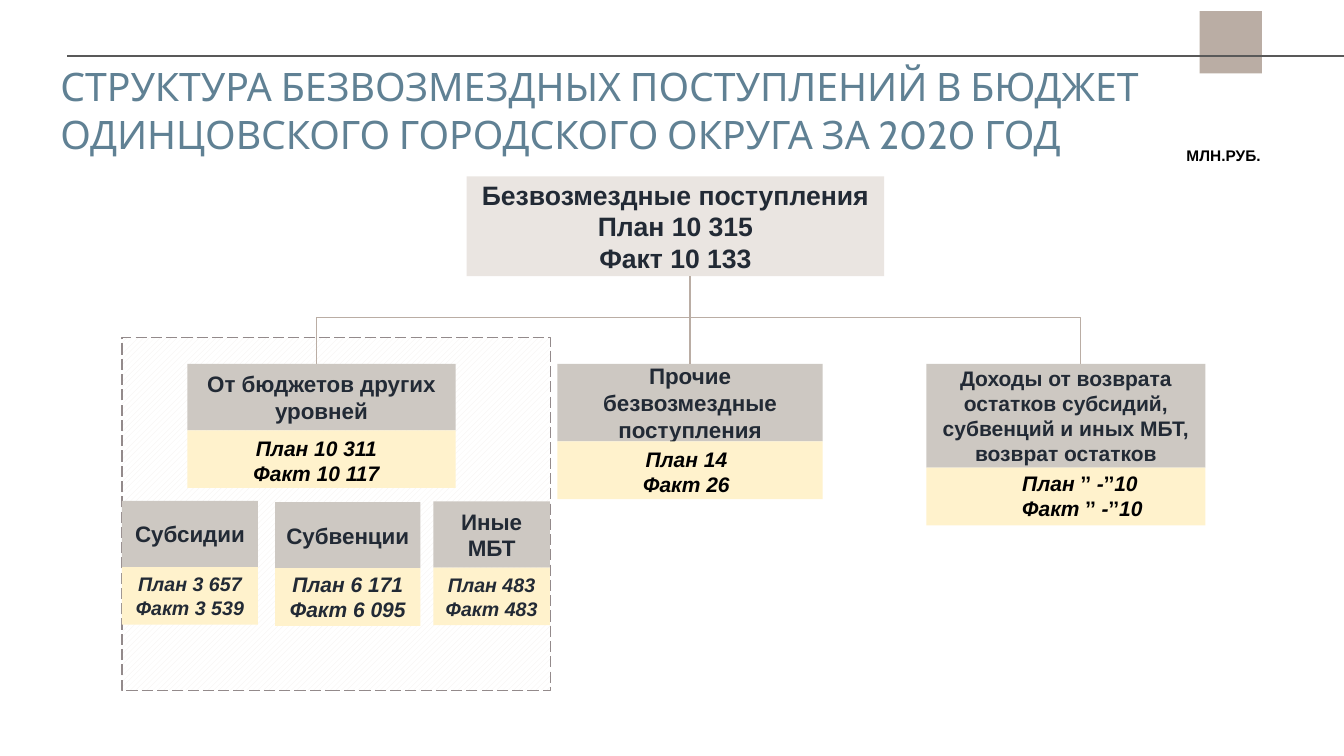
from dataclasses import dataclass

from lxml.etree import SubElement
from pptx import Presentation
from pptx.dml.color import RGBColor
from pptx.enum.dml import MSO_LINE as Dash, MSO_PATTERN as Pattern
from pptx.enum.shapes import MSO_CONNECTOR as Connector, MSO_SHAPE as Preset
from pptx.enum.text import MSO_ANCHOR as Anchor, MSO_AUTO_SIZE as AutoSize, PP_ALIGN as Align
from pptx.oxml.ns import qn
from pptx.util import Pt


@dataclass(frozen=True)
class Theme:
    """Colours, fonts and type sizes of the slide."""
    heading_font: str = "Cabin"
    body_font: str = "Arial"
    heading: str = "608194"
    ink: str = "222A35"
    black: str = "000000"
    accent: str = "BAADA4"
    rule: str = "595959"
    frame: str = "938A8B"
    hatch: str = "F3F0ED"
    paper: str = "FFFFFF"
    root: str = "EAE5E1"
    label: str = "CDC8C2"
    band: str = "FFF2CC"
    heading_size: float = 28
    root_size: float = 19
    label_size: float = 16
    figure_size: float = 15
    small_size: float = 14
    unit_size: float = 11


def write_text(shape, text, size, color, font=Theme.body_font, bold=True, italic=False,
               align=Align.CENTER, anchor=Anchor.MIDDLE, wrap=True, grow=False,
               side=7.2, indent=0, edge=3.6):
    """Fill a shape with one paragraph per line of text."""
    frame = shape.text_frame
    frame.word_wrap = wrap
    frame.auto_size = AutoSize.SHAPE_TO_FIT_TEXT if grow else AutoSize.NONE
    frame.vertical_anchor = anchor
    frame.margin_left = Pt(side + indent)
    frame.margin_right = Pt(side)
    frame.margin_top = frame.margin_bottom = Pt(edge)
    frame.text = text
    for paragraph in frame.paragraphs:
        paragraph.alignment = align
        style = paragraph.font
        style.name, style.size = font, Pt(size)
        style.bold, style.italic = bold, italic
        style.color.rgb = RGBColor.from_string(color)


class Board:
    """Draws styled elements on one slide, in points."""

    def __init__(self, slide, theme):
        self.shapes = slide.shapes
        self.theme = theme

    def box(self, left, top, width, height, fill, text="", **style):
        """Add a plain filled rectangle with optional text."""
        shape = self.shapes.add_shape(Preset.RECTANGLE, Pt(left), Pt(top), Pt(width), Pt(height))
        shape.shadow.inherit = False
        shape.fill.solid()
        shape.fill.fore_color.rgb = RGBColor.from_string(fill)
        shape.line.fill.background()
        if text:
            write_text(shape, text, **style)
        return shape

    def hatched_frame(self, left, top, width, height):
        """Add a dashed rectangle with a diagonal hatch."""
        shape = self.box(left, top, width, height, self.theme.paper)
        shape.fill.patterned()
        shape.fill.pattern = Pattern.WIDE_UPWARD_DIAGONAL
        shape.fill.fore_color.rgb = RGBColor.from_string(self.theme.hatch)
        shape.fill.back_color.rgb = RGBColor.from_string(self.theme.paper)
        shape.line.color.rgb = RGBColor.from_string(self.theme.frame)
        shape.line.width = Pt(1)
        shape.line.dash_style = Dash.LONG_DASH

    def text(self, left, top, width, height, text, **style):
        """Add a text box."""
        shape = self.shapes.add_textbox(Pt(left), Pt(top), Pt(width), Pt(height))
        write_text(shape, text, **style)

    def line(self, start, end, color, width, target=None):
        """Add a straight connector, joined to the top of a target if given."""
        points = [Pt(value) for value in (*start, *end)]
        connector = self.shapes.add_connector(Connector.STRAIGHT, *points)
        connector.line.color.rgb = RGBColor.from_string(color)
        connector.line.width = Pt(width)
        SubElement(connector.element.spPr, qn("a:effectLst"))
        if target is not None:
            connector.end_connect(target, 0)

    def bracket(self, left, top, right, left_end, right_end):
        """Add an open bracket reaching down to two branches."""
        start, *corners = [(Pt(x), Pt(y)) for x, y in (
            (left, left_end), (left, top), (right, top), (right, right_end))]
        builder = self.shapes.build_freeform(*start, scale=1.0)
        builder.add_line_segments(corners, close=False)
        shape = builder.convert_to_shape()
        shape.shadow.inherit = False
        shape.fill.background()
        shape.line.color.rgb = RGBColor.from_string(self.theme.accent)
        shape.line.width = Pt(1)

    def card(self, left, top, width, label_height, label, label_size, figures="", figure_size=15):
        """Add a label with a band of figures under it."""
        theme = self.theme
        label_box = self.box(left, top, width, label_height, theme.label, label,
                             size=label_size, color=theme.ink)
        self.box(left, top + label_height, width, 41.2, theme.band, figures,
                 size=figure_size, color=theme.ink, italic=True)
        return label_box


def main():
    """Build and save the slide."""
    theme = Theme()
    presentation = Presentation()
    presentation.slide_width, presentation.slide_height = Pt(960), Pt(540)
    board = Board(presentation.slides.add_slide(presentation.slide_layouts[6]), theme)

    board.hatched_frame(87.1, 241.2, 306, 252)
    board.bracket(226.1, 226.8, 771.8, 270.7, 275.8)
    board.box(333.4, 126, 298.1, 71.3, theme.root,
              "Безвозмездные поступления\nПлан 10 315\nФакт 10 133",
              size=theme.root_size, color=theme.ink)

    branch_top = 259.9
    board.card(133.9, branch_top, 191.5, 47.5, "От бюджетов других уровней", theme.label_size)
    other = board.card(398.2, branch_top, 189.4, 55.4,
                       "Прочие безвозмездные поступления", theme.label_size)
    board.card(661.7, branch_top, 199.4, 74.2,
               "Доходы от возврата остатков субсидий, субвенций и иных МБТ, возврат остатков",
               theme.figure_size)
    board.line((492.9, 197.3), (492.9, branch_top), theme.accent, 1, target=other)

    branch_figures = (
        (134.6, 307.4, 182.9, "План 10 311\nФакт 10 117", {}),
        (398.9, 315.4, 182.9, "План 14\nФакт 26", {}),
        (706.3, 332.6, 131.8, "План ˮ -ˮ10\nФакт ˮ -ˮ10", {"align": Align.LEFT, "indent": 16.7}),
    )
    for left, top, width, figures, style in branch_figures:
        board.text(left, top, width, 43.9, figures, size=theme.figure_size, color=theme.black,
                   italic=True, anchor=Anchor.TOP, grow=True, **style)

    transfers = (
        (87.1, 357.8, 97.2, "Субсидии", "План 3 657\nФакт 3 539", theme.small_size),
        (196.6, 358.6, 103.7, "Субвенции", "План 6 171\nФакт 6 095", theme.figure_size),
        (309.6, 358.2, 83.2, "Иные МБТ", "План 483\nФакт 483", theme.small_size),
    )
    for left, top, width, label, figures, size in transfers:
        board.card(left, top, width, 47.2, label, theme.label_size, figures, size)

    board.text(36, 46.1, 893.5, 64.8,
               "СТРУКТУРА БЕЗВОЗМЕЗДНЫХ ПОСТУПЛЕНИЙ В БЮДЖЕТ\n"
               "ОДИНЦОВСКОГО ГОРОДСКОГО ОКРУГА ЗА 2020 ГОД",
               size=theme.heading_size, color=theme.heading, font=theme.heading_font,
               bold=False, align=Align.LEFT)
    board.text(838.1, 99.4, 72.7, 23, "МЛН.РУБ.", size=theme.unit_size, color=theme.black,
               align=Align.LEFT, anchor=Anchor.TOP, wrap=False, grow=True, side=9.4, edge=5)
    board.box(856.8, 7.9, 44.6, 44.6, theme.accent)
    board.line((48.2, 40.3), (960, 40.3), theme.rule, 1.5)

    presentation.save("out.pptx")


if __name__ == "__main__":
    main()
